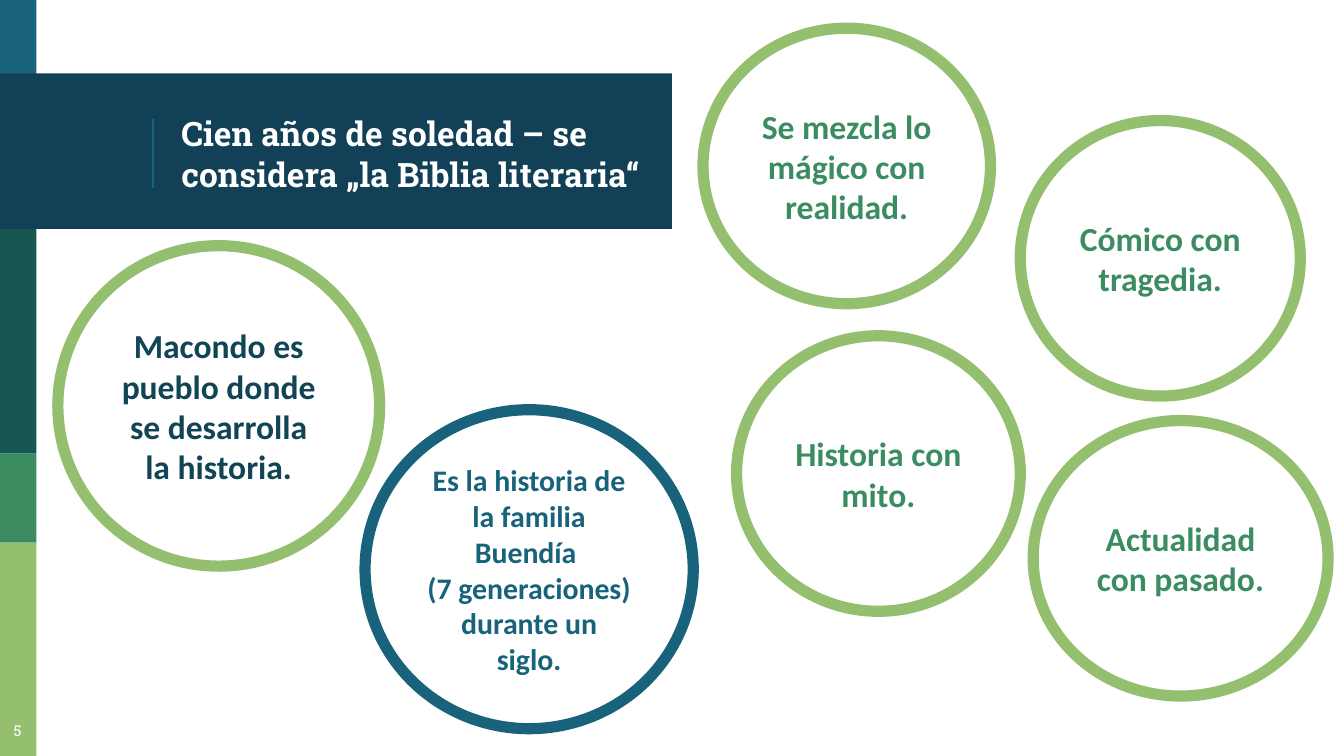
import pptx
import pptx.util
import pptx.dml.color
import pptx.enum.shapes
import pptx.enum.text
import pptx.oxml
import pptx.oxml.ns

Pt = pptx.util.Pt
ALIGN = pptx.enum.text.PP_ALIGN
ANCHOR = pptx.enum.text.MSO_ANCHOR
SHAPE = pptx.enum.shapes.MSO_SHAPE

COLORS = {
    "navy": "124057",
    "ink": "114454",
    "blue": "18637B",
    "teal": "165751",
    "green": "3B8D61",
    "lime": "94BF6E",
    "white": "FFFFFF",
}


class SlideBuilder:
    heading_font = "Roboto Slab"
    body_font = "Calibri"
    inset = 7.2
    ring_width = 6

    def __init__(self, slide):
        self.slide = slide

    def color(self, name):
        return pptx.dml.color.RGBColor.from_string(COLORS[name])

    def add_text(self, shape, paragraphs, size, color, font, bold=True,
                 align=ALIGN.CENTER, anchor=ANCHOR.MIDDLE):
        frame = shape.text_frame
        frame.word_wrap = True
        frame.auto_size = pptx.enum.text.MSO_AUTO_SIZE.NONE
        frame.vertical_anchor = anchor
        frame.margin_left = frame.margin_right = Pt(self.inset)
        frame.margin_top = frame.margin_bottom = Pt(self.inset)
        for index, text in enumerate(paragraphs):
            paragraph = frame.add_paragraph() if index else frame.paragraphs[0]
            paragraph.alignment = align
            run = paragraph.add_run()
            run.text = text
            run.font.name = font
            run.font.size = Pt(size)
            run.font.bold = bold
            run.font.color.rgb = self.color(color)

    def block(self, left, top, width, height, color):
        shape = self.slide.shapes.add_shape(
            SHAPE.RECTANGLE, Pt(left), Pt(top), Pt(width), Pt(height))
        shape.shadow.inherit = False
        shape.fill.solid()
        shape.fill.fore_color.rgb = self.color(color)
        shape.line.fill.background()

    def vertical_rule(self, x, top, bottom, color):
        line = self.slide.shapes.add_connector(
            pptx.enum.shapes.MSO_CONNECTOR.STRAIGHT, Pt(x), Pt(top), Pt(x), Pt(bottom))
        line.line.color.rgb = self.color(color)
        line.line.width = Pt(0.75)
        properties = line._element.spPr
        properties.append(pptx.oxml.parse_xml(
            "<a:effectLst %s/>" % pptx.oxml.ns.nsdecls("a")))

    def title(self, left, top, width, height, text):
        shape = self.slide.shapes.title
        shape.left, shape.top = Pt(left), Pt(top)
        shape.width, shape.height = Pt(width), Pt(height)
        self.add_text(shape, [text], 18, "white", self.heading_font, align=ALIGN.LEFT)
        # Keep the title in front of the banner
        self.slide.shapes._spTree.append(shape._element)

    def ring(self, left, top, width, height, paragraphs, ring_color, text_color, size=18):
        shape = self.slide.shapes.add_shape(
            SHAPE.OVAL, Pt(left), Pt(top), Pt(width), Pt(height))
        shape.shadow.inherit = False
        shape.fill.background()
        shape.line.color.rgb = self.color(ring_color)
        shape.line.width = Pt(self.ring_width)
        self.add_text(shape, paragraphs, size, text_color, self.body_font)

    def page_number(self, left, top, width, height, text):
        box = self.slide.shapes.add_textbox(Pt(left), Pt(top), Pt(width), Pt(height))
        self.add_text(box, [text], 8, "white", self.heading_font, bold=False,
                      anchor=ANCHOR.TOP)


def main():
    presentation = pptx.Presentation()
    presentation.slide_width = Pt(720)
    presentation.slide_height = Pt(405)
    builder = SlideBuilder(presentation.slides.add_slide(presentation.slide_layouts[5]))

    # Side strip: top, bottom and colour of each band
    strip = [(0, 42, "blue"), (122.5, 243, "teal"),
             (243, 290.7, "green"), (290.7, 405, "lime")]
    for top, bottom, color in strip:
        builder.block(0, top, 19.5, bottom - top, color)

    # Title banner
    builder.block(0, 39.3, 360, 83.4, "navy")
    builder.vertical_rule(81.9, 64, 100.8, "blue")
    builder.title(90, 42, 270, 80.6,
                  "Cien años de soledad – se considera „la Biblia literaria“")

    # Contrasts in the novel: green rings of one height
    contrasts = [
        (376.6, 15.1, 154, "Se mezcla lo mágico con realidad."),
        (546.6, 64.6, 150, "Cómico con tragedia."),
        (553.5, 225.3, 158, "Actualidad con pasado."),
        (394.6, 179.9, 152, "Historia con mito."),
    ]
    for left, top, width, text in contrasts:
        builder.ring(left, top, width, 147.6, [text], "lime", "green")

    # Setting and story
    builder.ring(31, 131.6, 172.4, 171.7,
                 ["Macondo es pueblo donde se desarrolla la historia."], "lime", "ink")
    builder.ring(195.6, 219.5, 175.8, 170.9,
                 ["Es la historia de la familia Buendía ",
                  "(7 generaciones) durante un siglo."], "blue", "blue", size=16)

    builder.page_number(-4.3, 379.5, 27.4, 25.5, "5")
    presentation.save("out.pptx")


if __name__ == "__main__":
    main()
